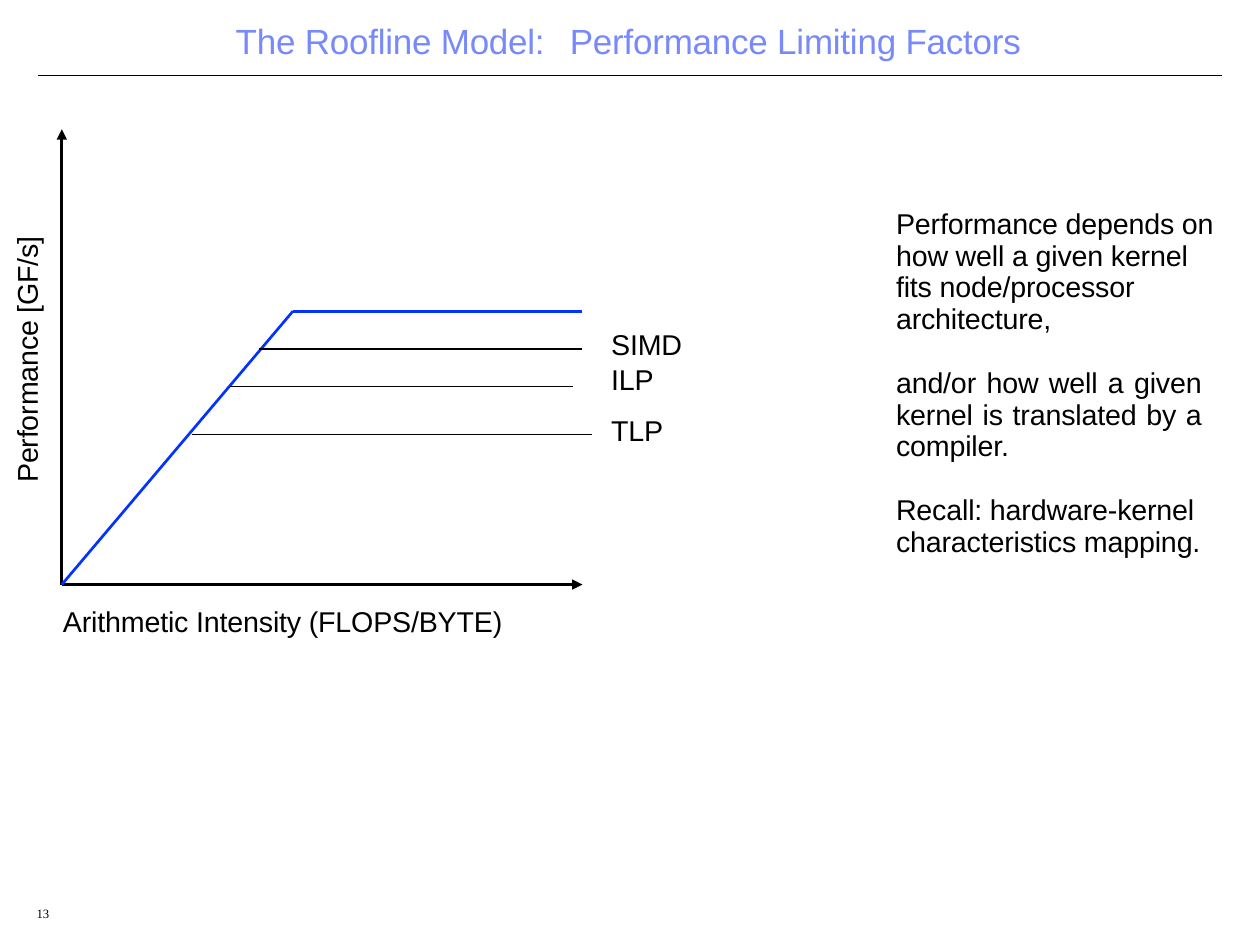
from dataclasses import dataclass

from lxml import etree
from pptx import Presentation
from pptx.dml.color import RGBColor
from pptx.enum.shapes import MSO_CONNECTOR
from pptx.enum.text import PP_ALIGN
from pptx.oxml.ns import qn
from pptx.util import Inches, Pt

STRAIGHT = MSO_CONNECTOR.STRAIGHT
LEFT = PP_ALIGN.LEFT
JUSTIFY = PP_ALIGN.JUSTIFY


@dataclass(frozen=True)
class Theme:
    ink: str = "000000"
    title: str = "7889FB"
    roof: str = "0433FF"
    font: str = "Arial"
    number_font: str = "Times New Roman"
    title_size: float = 22
    body_size: float = 18
    number_size: float = 8
    thin: float = 0.75
    roof_width: float = 1.7
    axis_width: float = 2.15


def add_text(para, text, *, font, size, color, align=LEFT, leading=None,
             before=0, spacing=-10, tab=None):
    para.alignment = align
    para.space_before = Pt(before)
    if leading:
        para.line_spacing = leading
    if tab:
        stops = etree.SubElement(para._p.get_or_add_pPr(), qn("a:tabLst"))
        etree.SubElement(stops, qn("a:tab"), pos=str(Inches(tab)), algn="l")
    span = para.add_run()
    span.text = text
    span.font.name = font
    span.font.size = Pt(size)
    span.font.color.rgb = RGBColor.from_string(color)
    span._r.get_or_add_rPr().set("spc", str(spacing))


class RooflineSlide:
    def __init__(self, page, theme):
        self.page = page
        self.theme = theme

    def text(self, left, top, width, height, *entries, inset=0.01,
             vertical=False, **style):
        box = self.page.shapes.add_textbox(
            Inches(left), Inches(top), Inches(width), Inches(height))
        frame = box.text_frame
        frame.word_wrap = True
        frame.margin_left = frame.margin_right = frame.margin_bottom = 0
        frame.margin_top = Inches(inset)
        if vertical:
            frame._txBody.bodyPr.set("vert", "vert270")
        base = {"font": self.theme.font, "size": self.theme.body_size,
                "color": self.theme.ink}
        for index, (text, before) in enumerate(entries):
            para = frame.add_paragraph() if index else frame.paragraphs[0]
            add_text(para, text, before=before, **(base | style))

    def line(self, start, end, color, width, arrow=False):
        connector = self.page.shapes.add_connector(
            STRAIGHT, *(Inches(value) for value in (*start, *end)))
        connector.line.color.rgb = RGBColor.from_string(color)
        connector.line.width = Pt(width)
        if arrow:
            etree.SubElement(connector.line._get_or_add_ln(),
                             qn("a:tailEnd"), type="triangle")
        etree.SubElement(connector._element.spPr, qn("a:effectLst"))

    def heading(self):
        theme = self.theme
        self.line((0.33, 0.66), (10.68, 0.66), theme.ink, theme.thin)
        self.text(2.06, 0.16, 6.95, 0.39,
                  ("The Roofline Model:\tPerformance Limiting Factors", 0.9),
                  size=theme.title_size, color=theme.title, tab=2.92)

    def chart(self):
        theme = self.theme
        origin, ridge = (0.54, 5.11), (2.56, 2.72)
        for tip in ((5.09, 5.11), (0.54, 1.13)):
            self.line(origin, tip, theme.ink, theme.axis_width, arrow=True)
        self.line(origin, ridge, theme.roof, theme.roof_width)
        self.line(ridge, (5.09, 2.72), theme.roof, theme.roof_width)
        for start, end, level in ((2.26, 5.09, 3.05), (2.01, 5.01, 3.38),
                                  (1.68, 5.17, 3.8)):
            self.line((start, level), (end, level), theme.ink, theme.thin)
        self.text(0.09, 2.01, 0.31, 2.21, ("Performance [GF/s]", 0),
                  inset=0, vertical=True, leading=Pt(20.9))
        self.text(0.55, 5.27, 3.95, 0.33,
                  ("Arithmetic Intensity (FLOPS/BYTE)", 0.9))
        self.text(5.34, 2.85, 0.65, 1.08, ("SIMD ILP", 0.8), ("TLP", 10.6))

    def remarks(self):
        for top, width, height, align, text in (
            (1.78, 2.83, 1.16, LEFT,
             "Performance depends on how well a given kernel "
             "fits node/processor architecture,"),
            (3.17, 2.67, 0.88, JUSTIFY,
             "and/or how well a given kernel is translated by a compiler."),
            (4.28, 2.74, 0.61, LEFT,
             "Recall: hardware-kernel characteristics mapping."),
        ):
            self.text(7.83, top, width, height, (text, 3), inset=0.04,
                      align=align, leading=Pt(20))

    def number(self, text):
        self.text(0.32, 7.92, 0.17, 0.15, (text, 0.1), inset=0, spacing=0,
                  font=self.theme.number_font, size=self.theme.number_size)


def main():
    deck = Presentation()
    deck.slide_width = Inches(11.01)
    deck.slide_height = Inches(8.26)
    roofline = RooflineSlide(deck.slides.add_slide(deck.slide_layouts[6]),
                             Theme())
    roofline.heading()
    roofline.remarks()
    roofline.chart()
    roofline.number("13")
    deck.save("out.pptx")


if __name__ == "__main__":
    main()
